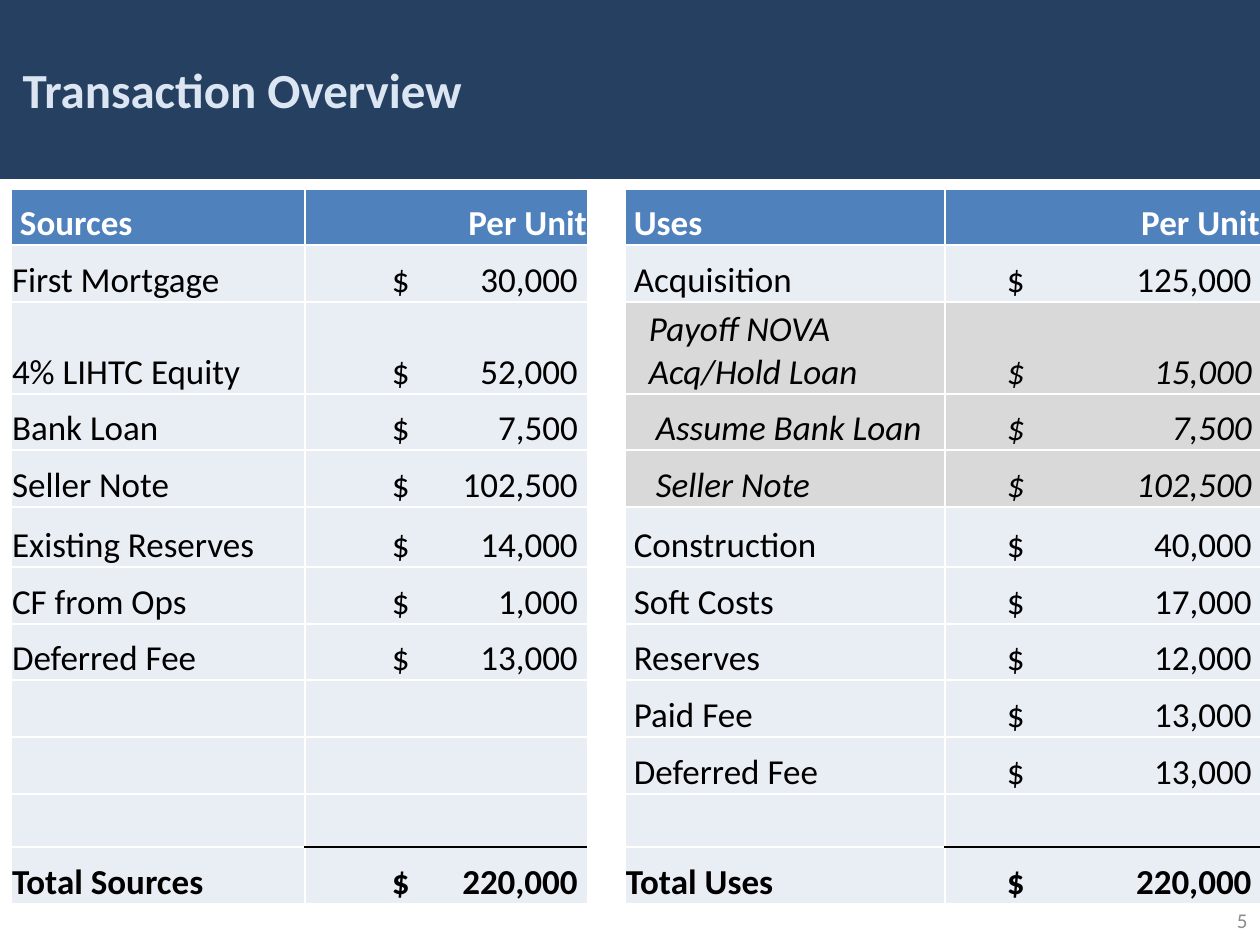
from lxml.etree import SubElement
from pptx import Presentation
from pptx.dml.color import RGBColor
from pptx.enum.shapes import MSO_SHAPE as Shape
from pptx.enum.text import MSO_ANCHOR as Anchor, PP_ALIGN as Align
from pptx.oxml.ns import qn
from pptx.util import Pt

# Content: (label, amount) for each side
SOURCES = [
    ("Sources", "Per Unit"),
    ("First Mortgage", "30,000"),
    ("4% LIHTC Equity", "52,000"),
    ("Bank Loan", "7,500"),
    ("Seller Note", "102,500"),
    ("Existing Reserves", "14,000"),
    ("CF from Ops", "1,000"),
    ("Deferred Fee", "13,000"),
    ("", ""),
    ("", ""),
    ("", ""),
    ("Total Sources", "220,000"),
]
USES = [
    ("Uses", "Per Unit"),
    ("Acquisition", "125,000"),
    ("Payoff NOVA Acq/Hold Loan", "15,000"),
    ("Assume Bank Loan", "7,500"),
    ("Seller Note", "102,500"),
    ("Construction", "40,000"),
    ("Soft Costs", "17,000"),
    ("Reserves", "12,000"),
    ("Paid Fee", "13,000"),
    ("Deferred Fee", "13,000"),
    ("", ""),
    ("Total Uses", "220,000"),
]
DETAIL = {2: 24, 3: 31, 4: 31}  # indented rows of the uses side
COLS = [294, 283, 25, 320, 316]
ROWS = [56, 57, 92, 56, 57, 60, 57, 56, 57, 57, 53, 57]
LAST = len(ROWS) - 1
TABS = {1: (86, 272), 4: (61, 306)}  # dollar sign, end of number

HEX = {
    "navy": "254061", "pale": "DCE6F2", "blue": "4F81BD", "cell": "E9EDF4",
    "gray": "D9D9D9", "num": "8C8C8C", "white": "FFFFFF", "black": "000000",
}
PX = 914400 // 126


def px(*vals):
    return [v * PX for v in vals]


def rgb(name):
    return RGBColor.from_string(HEX[name])


def style(par, size, color, bold=False, ital=False):
    for run in par.runs:
        font = run.font
        font.name, font.size = "Calibri", Pt(size)
        font.bold, font.italic = bold, ital
        font.color.rgb = rgb(color)


def border(cell, **sides):
    props = cell._tc.get_or_add_tcPr()
    for side in "LRTB":
        line = SubElement(props, qn("a:ln" + side), w=str(Pt(1)))
        fill = SubElement(line, qn("a:solidFill"))
        SubElement(fill, qn("a:srgbClr"), val=HEX[sides.get(side, "white")])


def set_tabs(par, stops):
    tabs = SubElement(par._p.get_or_add_pPr(), qn("a:tabLst"))
    for pos, kind in zip(px(*stops), "lr"):
        SubElement(tabs, qn("a:tab"), pos=str(pos), algn=kind)


def indent(row, col):
    if row == 0:
        return 9
    if col == 0 or row == LAST:
        return 1
    return DETAIL.get(row, 9)


def fill_cell(cell, row, col, text):
    money = col in TABS
    detail = col > 2 and row in DETAIL
    edge = {}
    if money and row >= LAST - 1:
        edge = {"T" if row == LAST else "B": "black"}
    border(cell, **edge)
    cell.fill.solid()
    cell.fill.fore_color.rgb = rgb(
        "white" if col == 2 else "blue" if row == 0
        else "gray" if detail else "cell")
    cell.vertical_anchor = Anchor.BOTTOM
    cell.margin_left = (1 if money else indent(row, col)) * PX
    cell.margin_right = cell.margin_top = PX
    cell.margin_bottom = 0
    if not text:
        return
    par = cell.text_frame.paragraphs[0]
    if money and row:
        set_tabs(par, TABS[col])
        text = f"\t$\t{text}"
    elif money:
        par.alignment = Align.RIGHT
    par.text = text
    style(par, 20, "black" if row else "white", row in (0, LAST), detail)


deck = Presentation()
deck.slide_width, deck.slide_height = px(1260, 945)
slide = deck.slides.add_slide(deck.slide_layouts[5])
shapes = slide.shapes

# Header band, behind the title
band = shapes.add_shape(Shape.RECTANGLE, *px(0, 0, 1260, 179))
band.shadow.inherit = False
band.fill.solid()
band.fill.fore_color.rgb = rgb("navy")
band.line.fill.background()
shapes._spTree.insert(2, band._element)

# Title
title = shapes.title
title.left, title.top, title.width, title.height = px(10, 16, 1040, 146)
title.text_frame.text = "Transaction Overview"
title.text_frame.vertical_anchor = Anchor.MIDDLE
head = title.text_frame.paragraphs[0]
head.alignment = Align.LEFT
style(head, 28, "pale", True)

# Page number
page = shapes.add_textbox(*px(976, 895, 284, 50)).text_frame
page.word_wrap = True
page.vertical_anchor = Anchor.MIDDLE
page.text = "5"
page.paragraphs[0].alignment = Align.RIGHT
style(page.paragraphs[0], 12, "num")

# Sources and uses table
table = shapes.add_table(len(ROWS), len(COLS),
                         *px(11, 189, sum(COLS), sum(ROWS))).table
table.first_row = table.horz_banding = False
for col, wide in zip(table.columns, px(*COLS)):
    col.width = wide
for row, high in zip(table.rows, px(*ROWS)):
    row.height = high
for r, (source, use) in enumerate(zip(SOURCES, USES)):
    for c, text in enumerate((*source, "", *use)):
        fill_cell(table.cell(r, c), r, c, text)

deck.save("out.pptx")
